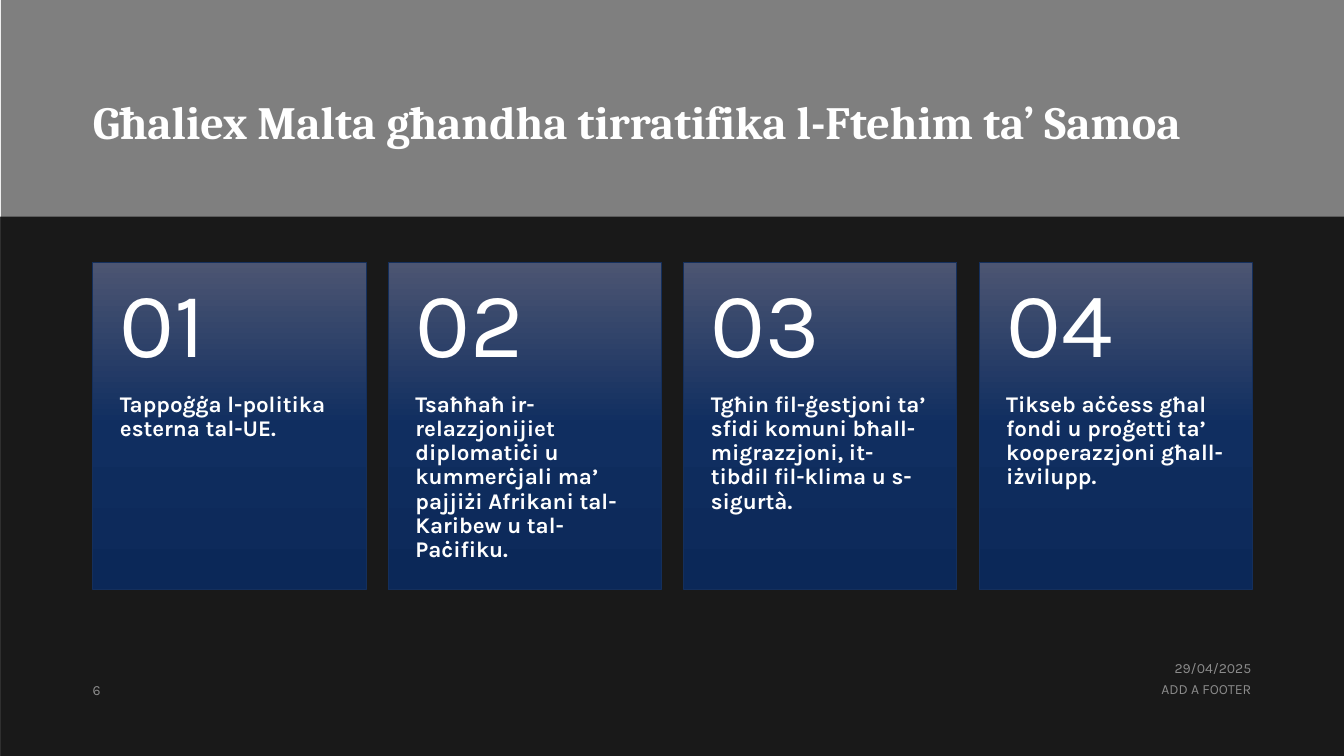
from copy import deepcopy
from dataclasses import dataclass

from lxml import etree
from pptx import Presentation
from pptx.dml.color import RGBColor
from pptx.enum.shapes import MSO_SHAPE
from pptx.enum.text import MSO_ANCHOR, MSO_AUTO_SIZE, PP_ALIGN
from pptx.oxml.ns import qn
from pptx.util import Inches, Pt

RECTANGLE = MSO_SHAPE.RECTANGLE
TOP, MIDDLE, BOTTOM = MSO_ANCHOR.TOP, MSO_ANCHOR.MIDDLE, MSO_ANCHOR.BOTTOM
LEFT, RIGHT = PP_ALIGN.LEFT, PP_ALIGN.RIGHT
NO_AUTOFIT = MSO_AUTO_SIZE.NONE

COLOURS = {
    "band": "000000",
    "text": "FFFFFF",
    "footer": "D9D9D9",
    "card_top": "4C5572",
    "card_middle": "102E60",
    "card_bottom": "0B2858",
    "card_line": "142F5C",
}
CARD_STOPS = ((0, "card_top"), (0.5, "card_middle"), (1, "card_bottom"))

MARGIN = 0.92
CARD_TOP, CARD_WIDTH, CARD_HEIGHT = 2.6, 2.71, 3.25
CARD_PITCH = 2.93
NUMBER_HEIGHT = 1.3
CARD_INSET = 0.27


@dataclass(frozen=True)
class Area:
    """Place and size in inches."""

    left: float
    top: float
    width: float
    height: float

    def lengths(self) -> tuple:
        """Return the four values as lengths."""
        return tuple(map(Inches, (self.left, self.top, self.width, self.height)))


@dataclass(frozen=True)
class FooterItem:
    """One small text at the foot of the page."""

    text: str
    area: Area
    align: PP_ALIGN
    anchor: MSO_ANCHOR = TOP
    line_spacing: float = 1.0


BANDS = (
    (Area(0.01, 0, 13.33, 7.5), 50),
    (Area(0, 2.15, 13.33, 5.35), 80),
)
FOOTER_ITEMS = (
    FooterItem("29/04/2025", Area(9.41, 6.56, 3, 0.16), RIGHT, line_spacing=0.9),
    FooterItem("ADD A FOOTER", Area(7.91, 6.75, 4.5, 0.21), RIGHT),
    FooterItem("6", Area(MARGIN, 6.73, 0.5, 0.2), LEFT, BOTTOM),
)
REASONS = (
    "Tappoġġa l-politika esterna tal-UE.",
    "Tsaħħaħ ir-relazzjonijiet diplomatiċi u kummerċjali ma’ pajjiżi "
    "Afrikani tal-Karibew u tal-Paċifiku.",
    "Tgħin fil-ġestjoni ta’ sfidi komuni bħall-migrazzjoni, it-tibdil "
    "fil-klima u s-sigurtà.",
    "Tikseb aċċess għal fondi u proġetti ta’ kooperazzjoni għall-iżvilupp.",
)


def colour(name: str) -> RGBColor:
    """Look up a named colour."""
    return RGBColor.from_string(COLOURS[name])


def set_opacity(element, percent: int) -> None:
    """Make the first colour inside an element partly transparent."""
    alpha = etree.SubElement(element.find(".//" + qn("a:srgbClr")), qn("a:alpha"))
    alpha.set("val", str(percent * 1000))


def write_text(box, text: str, *, size: float, font: str = "Karla",
               ink: str = "text", opacity: int = 100, bold: bool = False,
               align: PP_ALIGN = LEFT, anchor: MSO_ANCHOR = TOP,
               line_spacing: float = 0.9,
               insets: tuple = (0, 0, 0, 0)) -> None:
    """Fill a box with one formatted paragraph."""
    frame = box.text_frame
    frame.word_wrap = True
    frame.auto_size = NO_AUTOFIT
    frame.vertical_anchor = anchor
    (frame.margin_left, frame.margin_top,
     frame.margin_right, frame.margin_bottom) = map(Inches, insets)
    para = frame.paragraphs[0]
    para.alignment = align
    para.line_spacing = line_spacing
    span = para.add_run()
    span.text = text
    span.font.name = font
    span.font.size = Pt(size)
    span.font.bold = bold
    span.font.color.rgb = colour(ink)
    if opacity < 100:
        set_opacity(span.font._element, opacity)


def add_band(page, area: Area, opacity: int) -> None:
    """Draw a translucent background band."""
    band = page.shapes.add_shape(RECTANGLE, *area.lengths())
    band.shadow.inherit = False
    band.fill.solid()
    band.fill.fore_color.rgb = colour("band")
    set_opacity(band.fill._xPr, opacity)
    band.line.fill.background()


def add_card(page, index: int, reason: str) -> None:
    """Draw a numbered gradient card as a group."""
    left = MARGIN + index * CARD_PITCH
    group = page.shapes.add_group_shape()
    area = Area(left, CARD_TOP, CARD_WIDTH, CARD_HEIGHT)
    card = group.shapes.add_shape(RECTANGLE, *area.lengths())
    card.shadow.inherit = False
    card.fill.gradient()
    card.fill.gradient_angle = 270
    stop_list = card._element.find(".//" + qn("a:gsLst"))
    stop_list.append(deepcopy(stop_list[0]))
    for stop, (position, name) in zip(card.fill.gradient_stops, CARD_STOPS):
        stop.position = position
        stop.color.rgb = colour(name)
    card.line.color.rgb = colour("card_line")
    card.line.width = Pt(0.5)

    body = Area(left, CARD_TOP + NUMBER_HEIGHT, CARD_WIDTH,
                CARD_HEIGHT - NUMBER_HEIGHT)
    write_text(group.shapes.add_textbox(*body.lengths()), reason, size=16,
               bold=True, insets=(CARD_INSET, 0, CARD_INSET, 0.36))
    head = Area(left, CARD_TOP, CARD_WIDTH, NUMBER_HEIGHT)
    write_text(group.shapes.add_textbox(*head.lengths()), f"{index + 1:02d}",
               size=66, anchor=MIDDLE,
               insets=(CARD_INSET, 0.18, CARD_INSET, 0.18))


def add_title(page, text: str) -> None:
    """Place the title above the bands and write it."""
    title = page.shapes.title
    page.shapes._spTree.append(title._element)
    title.left, title.top, title.width, title.height = Area(
        MARGIN, 0.88, 11.5, 0.6).lengths()
    write_text(title, text, size=33, font="Cambria", bold=True, anchor=BOTTOM)


def main() -> None:
    """Build and save the deck."""
    deck = Presentation()
    deck.slide_width, deck.slide_height = Inches(13.33), Inches(7.5)
    page = deck.slides.add_slide(deck.slide_layouts.get_by_name("Title Only"))
    for area, opacity in BANDS:
        add_band(page, area, opacity)
    add_title(page, "Għaliex Malta għandha tirratifika l-Ftehim ta’ Samoa")
    for item in FOOTER_ITEMS:
        write_text(page.shapes.add_textbox(*item.area.lengths()), item.text,
                   size=10, ink="footer", opacity=60, align=item.align,
                   anchor=item.anchor, line_spacing=item.line_spacing)
    for index, reason in enumerate(REASONS):
        add_card(page, index, reason)
    deck.save("out.pptx")


if __name__ == "__main__":
    main()
